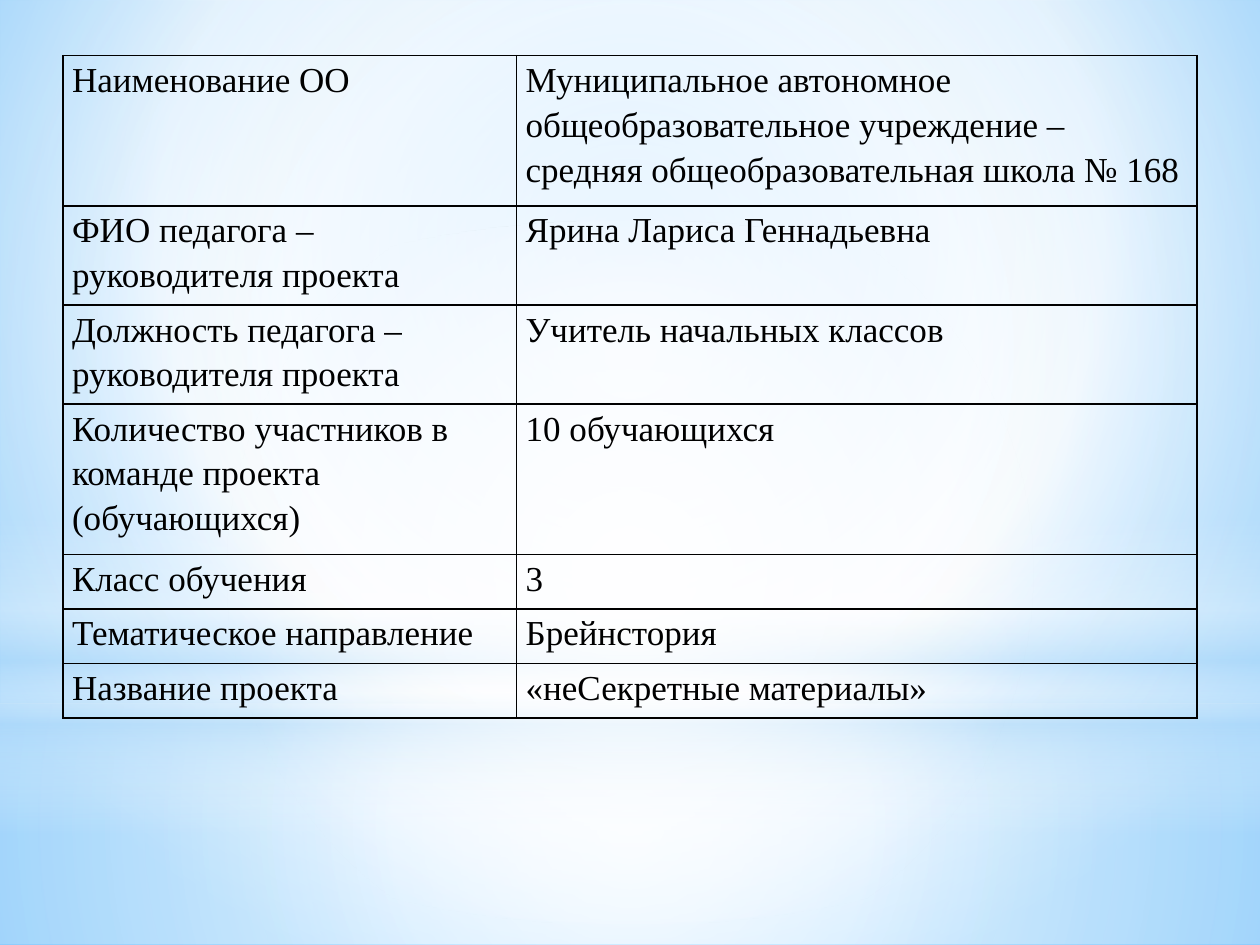
from dataclasses import dataclass

from lxml.etree import SubElement as Sub
from pptx import Presentation
from pptx.dml.color import RGBColor as RGB
from pptx.enum.shapes import MSO_SHAPE as Shape
from pptx.oxml.ns import qn
from pptx.util import Pt


@dataclass(frozen=True)
class Theme:
    font: str = "Times New Roman"
    size: float = 20
    ink: str = "000000"
    white: str = "FFFFFF"
    pale: str = "B4DCFA"
    sky: str = "9ED5FF"
    deep: str = "5BB9FF"
    lead: float = 1.15
    inset: float = 5.2
    rule: float = 1


class Deck:
    def __init__(self, theme, wide, high):
        self.theme = theme
        self.prs = Presentation()
        self.prs.slide_width, self.prs.slide_height = Pt(wide), Pt(high)
        self.slide = self.prs.slides.add_slide(self.prs.slide_layouts[6])

    def blend(self, owner, stops, focus=None):
        """Fill with (position, colour, opacity) stops: radial to focus, else downward."""
        owner.fill.gradient()
        grad = owner.element.find(".//" + qn("a:gradFill"))
        for child in list(grad):
            grad.remove(child)
        rows = Sub(grad, qn("a:gsLst"))
        for pos, tone, alpha in stops:
            stop = Sub(rows, qn("a:gs"), pos=str(pos * 1000))
            color = Sub(stop, qn("a:srgbClr"), val=tone)
            if alpha < 100:
                Sub(color, qn("a:alpha"), val=str(alpha * 1000))
        if focus:
            way = Sub(grad, qn("a:path"), path="circle")
            sides = {s: str(v * 1000) for s, v in zip("ltrb", focus)}
            Sub(way, qn("a:fillToRect"), **sides)
        else:
            Sub(grad, qn("a:lin"), ang=str(90 * 60000), scaled="0")

    def glow(self, kind, top, high, stops, focus=None):
        """Add a full-width band of soft light."""
        shape = self.slide.shapes.add_shape(
            kind, 0, Pt(top), self.prs.slide_width, Pt(high))
        shape.shadow.inherit = False
        shape.line.fill.background()
        self.blend(shape, stops, focus)

    def border(self, cell):
        props = cell._tc.get_or_add_tcPr()
        for spot, side in enumerate(("lnL", "lnR", "lnT", "lnB")):
            line = Sub(props, qn("a:" + side), w=str(Pt(self.theme.rule)))
            fill = Sub(line, qn("a:solidFill"))
            Sub(fill, qn("a:srgbClr"), val=self.theme.ink)
            props.insert(spot, line)

    def label(self, cell, text):
        look = self.theme
        cell.text_frame.text = text
        cell.margin_left = cell.margin_right = Pt(look.inset)
        cell.margin_top = cell.margin_bottom = 0
        para = cell.text_frame.paragraphs[0]
        para.line_spacing = look.lead
        font = para.runs[0].font
        font.name, font.size = look.font, Pt(look.size)
        font.color.rgb = RGB.from_string(look.ink)

    def table(self, left, top, cols, rows, data):
        table = self.slide.shapes.add_table(
            len(rows), len(cols), Pt(left), Pt(top),
            Pt(sum(cols)), Pt(sum(rows))).table
        table.first_row = table.horz_banding = False
        for col, wide in zip(table.columns, cols):
            col.width = Pt(wide)
        for row, high, texts in zip(table.rows, rows, data):
            row.height = Pt(high)
            for cell, text in zip(row.cells, texts):
                self.label(cell, text)
                cell.fill.background()
                self.border(cell)


FACTS = [
    ("Наименование ОО",
     "Муниципальное автономное общеобразовательное учреждение – "
     "средняя общеобразовательная школа № 168"),
    ("ФИО педагога – руководителя проекта", "Ярина Лариса Геннадьевна"),
    ("Должность педагога – руководителя проекта", "Учитель начальных классов"),
    ("Количество участников в команде проекта (обучающихся)", "10 обучающихся"),
    ("Класс обучения", "3"),
    ("Тематическое направление", "Брейнстория"),
    ("Название проекта", "«неСекретные материалы»"),
]


def main():
    look = Theme()
    white, pale = look.white, look.pale
    deck = Deck(look, 720, 540)
    mid = (50, 50, 50, 50)
    split = 402

    deck.blend(deck.slide.background,
               [(0, look.sky, 100), (60, white, 100), (100, look.deep, 100)],
               (20, 10, 20, 60))
    deck.glow(Shape.RECTANGLE, split, 540 - split,
              [(0, white, 91), (37, white, 76), (100, pale, 79)], mid)
    deck.glow(Shape.RECTANGLE, 0, split,
              [(0, white, 89), (48, white, 62), (100, pale, 79)], mid)
    deck.glow(Shape.RECTANGLE, 296.5, 180,
              [(0, white, 0), (29, white, 30), (45, pale, 40),
               (55, white, 26), (65, pale, 60), (100, white, 0)])
    deck.glow(Shape.OVAL, 126, split, [(0, white, 100), (56, white, 0)], mid)

    one, two, three = 31.2, 56.7, 85.8
    deck.table(36, 31.8, (259.2, 388.8),
               (three, two, two, three, one, one, one), FACTS)
    deck.prs.save("out.pptx")


if __name__ == "__main__":
    main()
